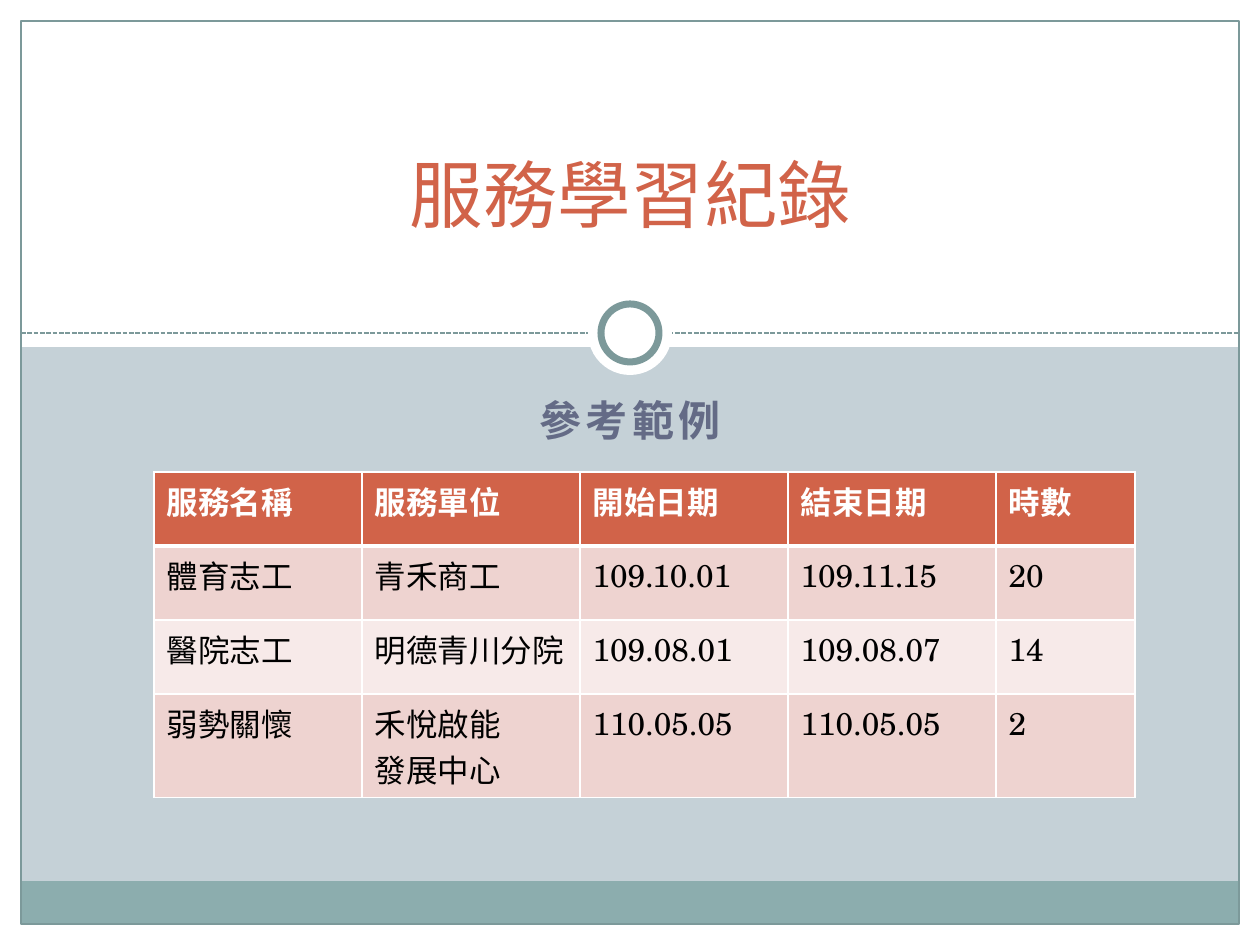
from dataclasses import dataclass

from lxml.etree import SubElement
from pptx import Presentation
from pptx.dml.color import RGBColor
from pptx.enum.dml import MSO_LINE
from pptx.enum.shapes import MSO_CONNECTOR, MSO_SHAPE
from pptx.enum.text import MSO_ANCHOR, PP_ALIGN
from pptx.oxml.ns import qn
from pptx.util import Emu, Pt

PX_PER_INCH = 126


@dataclass(frozen=True)
class Theme:
    font: str = "TeX Gyre Schola"
    background: str = "C5D1D7"
    white: str = "FFFFFF"
    black: str = "000000"
    footer: str = "8CADAE"
    rule: str = "7C999A"
    accent: str = "D16349"
    subtitle: str = "646B86"
    bands: tuple = ("EED3D0", "F7EAE9")
    title_size: int = 42
    subtitle_size: int = 24
    table_size: int = 18


THEME = Theme()
COLUMN_WIDTHS = (208, 218, 208, 208, 139)
ROW_HEIGHT = 74
RECORDS = (
    ("服務名稱", "服務單位", "開始日期", "結束日期", "時數"),
    ("體育志工", "青禾商工", "109.10.01", "109.11.15", "20"),
    ("醫院志工", "明德青川分院", "109.08.01", "109.08.07", "14"),
    ("弱勢關懷", "禾悅啟能\n發展中心", "110.05.05", "110.05.05", "2"),
)


def px(length):
    return Emu(round(length * 914400 / PX_PER_INCH))


def rgb(color):
    return RGBColor.from_string(color)


def style_text(frame, size, color, bold=False, align=None):
    for paragraph in frame.paragraphs:
        paragraph.alignment = align
        font = paragraph.font
        font.name, font.size, font.bold = THEME.font, Pt(size), bold
        font.color.rgb = rgb(color)


def add_block(slide, kind, box, fill=None, line=None, line_width=0.75):
    block = slide.shapes.add_shape(kind, *map(px, box))
    block.shadow.inherit = False
    if fill:
        block.fill.solid()
        block.fill.fore_color.rgb = rgb(fill)
    else:
        block.fill.background()
    if line:
        block.line.color.rgb = rgb(line)
        block.line.width = Pt(line_width)
    else:
        block.line.fill.background()


def add_ring(slide, center_x, center_y):
    # White halo around a ruled circle
    for size, line in ((84, None), (58, THEME.rule)):
        box = (center_x - size / 2, center_y - size / 2, size, size)
        add_block(slide, MSO_SHAPE.OVAL, box, THEME.white, line, 4)


def add_frame(slide, left, top, width, height):
    margin, header, footer = 21, 347, 43
    right, bottom = left + width - margin, top + height - margin
    inner_left, inner_width = left + margin, width - 2 * margin

    # White margins and header panel
    for box in ((left, bottom, width, margin),
                (right, top, margin, height),
                (left, top, margin, height),
                (left, top, width, header)):
        add_block(slide, MSO_SHAPE.RECTANGLE, box, THEME.white)

    # Footer band
    add_block(slide, MSO_SHAPE.RECTANGLE,
              (inner_left, bottom - footer, inner_width, footer), THEME.footer)

    # Dashed divider
    divider_y = top + 333
    divider = slide.shapes.add_connector(
        MSO_CONNECTOR.STRAIGHT, px(inner_left), px(divider_y), px(right), px(divider_y))
    divider.line.color.rgb = rgb(THEME.rule)
    divider.line.width = Pt(0.9)
    divider.line.dash_style = MSO_LINE.SQUARE_DOT
    SubElement(divider._element.spPr, qn("a:effectLst"))

    # Outline and central ring
    add_block(slide, MSO_SHAPE.RECTANGLE,
              (inner_left, top + margin, inner_width, height - 2 * margin),
              line=THEME.rule)
    add_ring(slide, left + width / 2, divider_y)


def place_title(slide, left, top, width, height):
    title = slide.shapes.title
    title.left, title.top, title.width, title.height = map(px, (left, top, width, height))
    title.text_frame.text = "服務學習紀錄"
    title.text_frame.vertical_anchor = MSO_ANCHOR.BOTTOM
    style_text(title.text_frame, THEME.title_size, THEME.accent, align=PP_ALIGN.CENTER)
    # Bring the title in front of the header panel
    title._element.getparent().append(title._element)


def add_subtitle(slide, left, top, width, height):
    subtitle = slide.shapes.add_textbox(*map(px, (left, top, width, height))).text_frame
    subtitle.word_wrap = True
    subtitle.text = "參考範例"
    style_text(subtitle, THEME.subtitle_size, THEME.subtitle, True, PP_ALIGN.CENTER)
    subtitle.paragraphs[0].runs[0]._r.get_or_add_rPr().set("spc", "250")


def set_borders(cell, bottom_width):
    properties = cell._tc.get_or_add_tcPr()
    widths = {"a:lnL": 1, "a:lnR": 1, "a:lnT": 1, "a:lnB": bottom_width}
    for index, (side, width) in enumerate(widths.items()):
        border = SubElement(properties, qn(side), w=str(Pt(width)))
        SubElement(SubElement(border, qn("a:solidFill")), qn("a:srgbClr"), val=THEME.white)
        # Borders come before the cell fill
        properties.insert(index, border)


def add_records(slide, left, top):
    box = (left, top, sum(COLUMN_WIDTHS), ROW_HEIGHT * len(RECORDS))
    table = slide.shapes.add_table(
        len(RECORDS), len(COLUMN_WIDTHS), *map(px, box)).table
    for column, width in zip(table.columns, COLUMN_WIDTHS):
        column.width = px(width)
    for r, record in enumerate(RECORDS):
        is_header = r == 0
        table.rows[r].height = px(ROW_HEIGHT)
        for c, value in enumerate(record):
            cell = table.cell(r, c)
            cell.text = value
            cell.fill.solid()
            cell.fill.fore_color.rgb = rgb(
                THEME.accent if is_header else THEME.bands[(r - 1) % 2])
            style_text(cell.text_frame, THEME.table_size,
                       THEME.white if is_header else THEME.black, is_header)
            set_borders(cell, 3 if is_header else 1)


def main():
    deck = Presentation()
    deck.slide_width, deck.slide_height = px(1260), px(945)
    slide = deck.slides.add_slide(deck.slide_layouts[5])
    slide.background.fill.solid()
    slide.background.fill.fore_color.rgb = rgb(THEME.background)

    add_frame(slide, 0, 0, 1260, 945)
    add_subtitle(slide, 189, 388, 882, 64)
    place_title(slide, 95, 53, 1071, 191)
    add_records(slide, 154, 472)
    deck.save("out.pptx")


if __name__ == "__main__":
    main()
